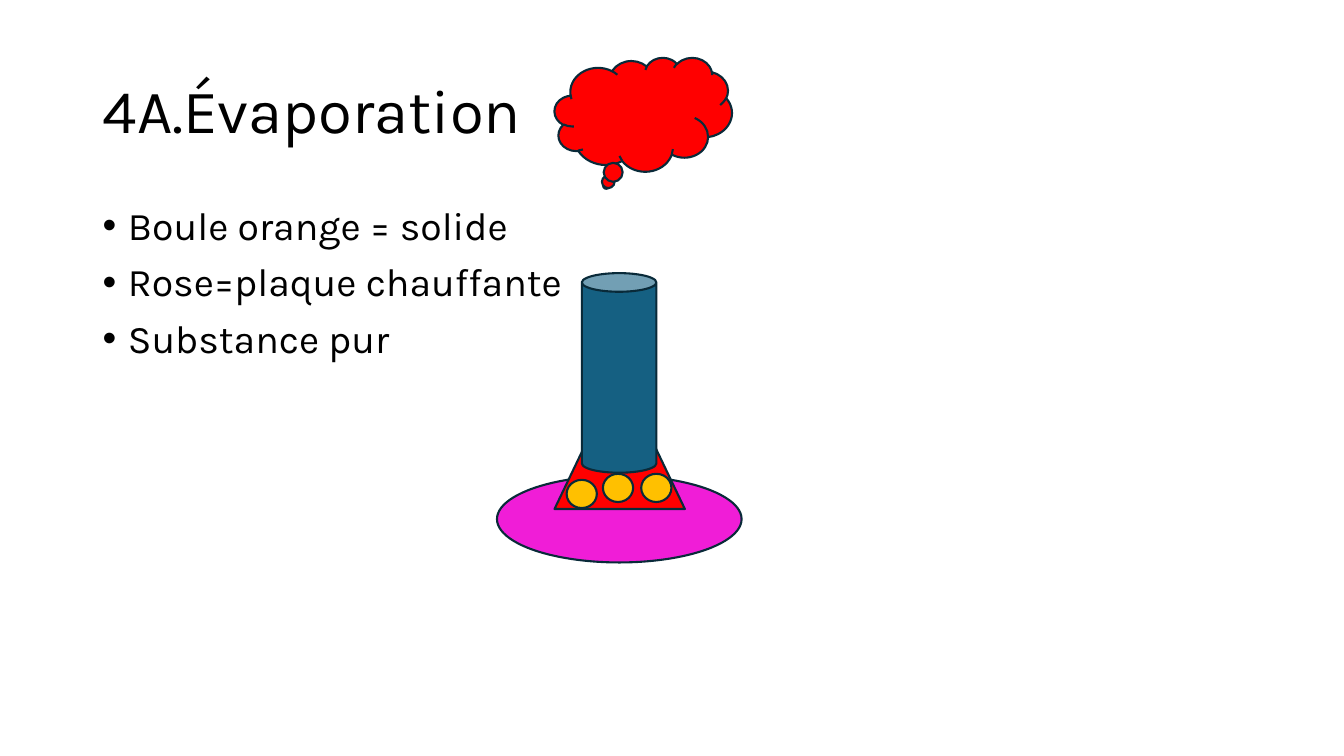
from dataclasses import dataclass

from lxml.etree import SubElement
from pptx import Presentation
from pptx.dml.color import RGBColor
from pptx.enum.shapes import MSO_SHAPE
from pptx.enum.text import MSO_ANCHOR
from pptx.oxml.ns import qn
from pptx.util import Inches, Pt


@dataclass(frozen=True)
class Theme:
    font: str = "Karla"
    title_size: int = 44
    body_size: int = 28
    line_width: float = 1.5
    text: str = "000000"
    outline: str = "092A39"
    background: str = "FFFFFF"
    heat: str = "FF0000"
    plate: str = "F01DD7"
    tube: str = "156082"
    solid: str = "FFC000"


class SlideBuilder:
    """Places styled elements on a slide by percent of its width and height."""

    def __init__(self, deck, theme):
        self.theme = theme
        self.column = deck.slide_width / 100
        self.row = deck.slide_height / 100
        self.slide = deck.slides.add_slide(deck.slide_layouts[6])
        fill = self.slide.background.fill
        fill.solid()
        fill.fore_color.rgb = RGBColor.from_string(theme.background)

    def place(self, left, top, width, height):
        return (round(left * self.column), round(top * self.row),
                round(width * self.column), round(height * self.row))

    def text(self, lines, area, size, anchor=MSO_ANCHOR.TOP, bulleted=False):
        frame = self.slide.shapes.add_textbox(*self.place(*area)).text_frame
        frame.word_wrap = True
        frame.vertical_anchor = anchor
        frame.text = "\n".join(lines)
        for paragraph in frame.paragraphs:
            paragraph.line_spacing = 0.9
            if bulleted:
                self.bullet(paragraph)
            for run in paragraph.runs:
                run.font.name = self.theme.font
                run.font.size = Pt(size)
                run.font.color.rgb = RGBColor.from_string(self.theme.text)

    def bullet(self, paragraph):
        paragraph.space_before = Pt(10)
        properties = paragraph._p.get_or_add_pPr()
        indent = Inches(0.25)
        properties.set("marL", str(indent))
        properties.set("indent", str(-indent))
        SubElement(properties, qn("a:buFont")).set("typeface", "Arial")
        SubElement(properties, qn("a:buChar")).set("char", "•")

    def shape(self, preset, area, color):
        element = self.slide.shapes.add_shape(preset, *self.place(*area))
        element.shadow.inherit = False
        element.fill.solid()
        element.fill.fore_color.rgb = RGBColor.from_string(color)
        element.line.color.rgb = RGBColor.from_string(self.theme.outline)
        element.line.width = Pt(self.theme.line_width)


def main():
    theme = Theme()
    deck = Presentation()
    deck.slide_width = Inches(13.33)
    deck.slide_height = Inches(7.5)
    evaporation = SlideBuilder(deck, theme)

    evaporation.text(["4A.Évaporation"], (6.9, 5.33, 86.25, 19.33),
                     theme.title_size, MSO_ANCHOR.MIDDLE)
    evaporation.text(["Boule orange = solide", "Rose=plaque chauffante", "Substance pur"],
                     (6.9, 26.67, 86.25, 63.47), theme.body_size, bulleted=True)

    evaporation.shape(MSO_SHAPE.OVAL, (36.98, 62.93, 18.2, 11.47), theme.plate)
    evaporation.shape(MSO_SHAPE.ISOSCELES_TRIANGLE, (41.26, 49.33, 9.7, 18), theme.heat)
    evaporation.shape(MSO_SHAPE.CAN, (43.29, 36.13, 5.55, 26.4), theme.tube)
    evaporation.shape(MSO_SHAPE.CLOUD_CALLOUT, (41.26, 7.6, 13.2, 15.07), theme.heat)
    for left, top in ((42.16, 63.47), (44.86, 62.67), (47.71, 62.67)):
        evaporation.shape(MSO_SHAPE.FLOWCHART_CONNECTOR, (left, top, 2.25, 3.73), theme.solid)

    deck.save("out.pptx")


if __name__ == "__main__":
    main()
